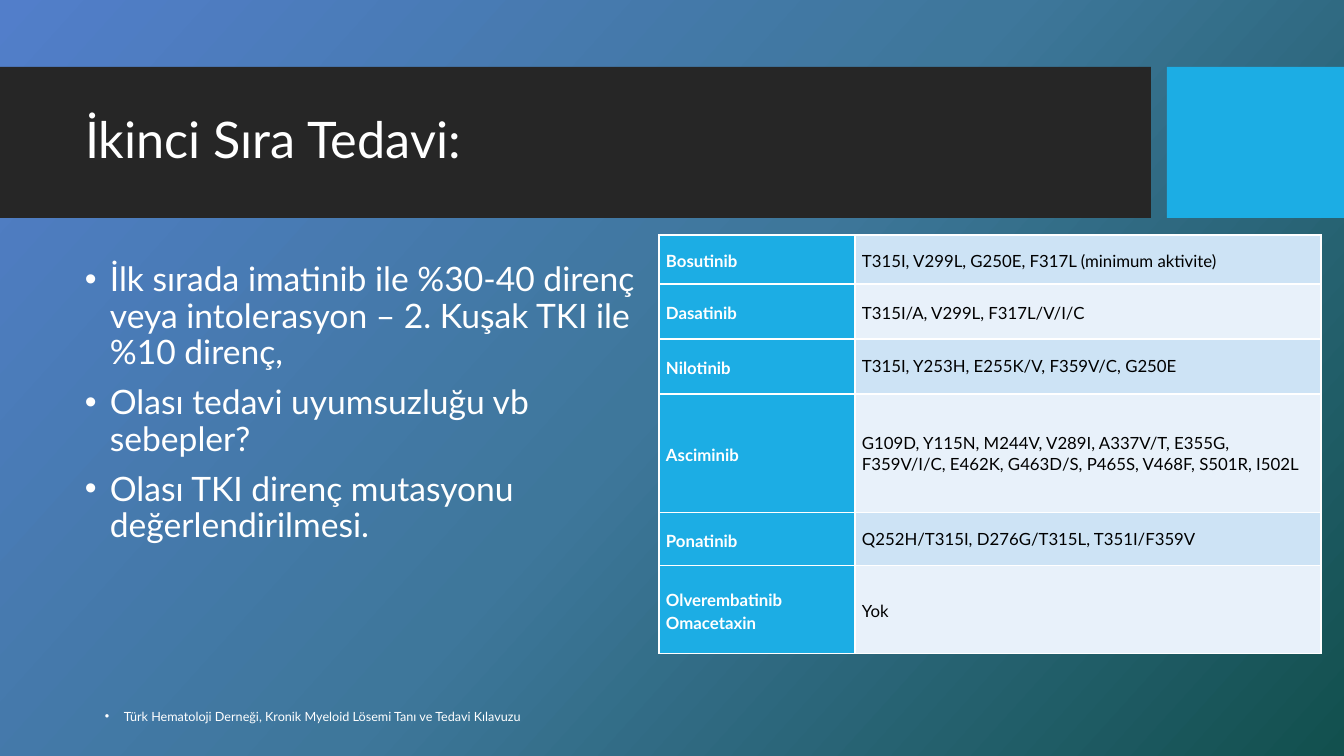
from lxml import etree
from pptx import Presentation
from pptx import util as u
from pptx.dml.color import RGBColor
from pptx.enum import shapes, text
from pptx.oxml.ns import qn

PX_PER_INCH = 100.8
WHITE = RGBColor(0xFF, 0xFF, 0xFF)
BLACK = RGBColor(0, 0, 0)
CHARCOAL = RGBColor(0x26, 0x26, 0x26)
CYAN = RGBColor(0x1C, 0xAD, 0xE4)
ROW_TINTS = [RGBColor(0xCD, 0xE3, 0xF5), RGBColor(0xE8, 0xF1, 0xFA)]
BACKGROUND = [
    (0, RGBColor(0x52, 0x7E, 0xCA)),
    (50, RGBColor(0x3E, 0x77, 0x9B)),
    (100, RGBColor(0x12, 0x50, 0x4E)),
]

REASONS = [
    "İlk sırada imatinib ile %30-40 direnç veya intolerasyon – 2. Kuşak TKI ile %10 direnç,",
    "Olası tedavi uyumsuzluğu vb sebepler?",
    "Olası TKI direnç mutasyonu değerlendirilmesi.",
]
# Drug, resistant mutations, line spacing of the mutations, row height
MUTATIONS = [
    ("Bosutinib", "T315I, V299L, G250E, F317L (minimum aktivite)", 1.15, 49),
    ("Dasatinib", "T315I/A, V299L, F317L/V/I/C", 1.15, 55),
    ("Nilotinib", "T315I, Y253H, E255K/V, F359V/C, G250E", 1.0, 55),
    ("Asciminib", "G109D, Y115N, M244V, V289I, A337V/T, E355G, F359V/I/C, "
     "E462K, G463D/S, P465S, V468F, S501R, I502L", 1.0, 119),
    ("Ponatinib", "Q252H/T315I, D276G/T315L, T351I/F359V", 1.0, 53),
    ("Olverembatinib\nOmacetaxin", "Yok", 1.15, 88),
]
SOURCE = "Türk Hematoloji Derneği, Kronik Myeloid Lösemi Tanı ve Tedavi Kılavuzu"


def px(length):
    return u.Inches(length / PX_PER_INCH)


class SlideBuilder:
    font = "Lato"

    def __init__(self, page):
        self.page = page

    def background(self, stops, clockwise_angle):
        fill = self.page.background.fill
        fill.gradient()
        fill.gradient_angle = 360 - clockwise_angle
        stop_list = next(self.page.background._cSld.iter(qn("a:gsLst")))
        for stop in list(stop_list):
            stop_list.remove(stop)
        for percent, color in stops:
            stop = etree.SubElement(stop_list, qn("a:gs"), pos=str(percent * 1000))
            etree.SubElement(stop, qn("a:srgbClr"), val=str(color))

    def band(self, left, top, width, height, color):
        band = self.page.shapes.add_shape(
            shapes.MSO_SHAPE.RECTANGLE, px(left), px(top), px(width), px(height))
        band.shadow.inherit = False
        band.fill.solid()
        band.fill.fore_color.rgb = color
        band.line.fill.background()

    def title(self, words, left, top, width, height):
        """Fill the title placeholder and bring it in front of the bands."""
        title = self.page.shapes.title
        title.left, title.top, title.width, title.height = map(
            px, (left, top, width, height))
        frame = title.text_frame
        frame.text = words
        frame.auto_size = text.MSO_AUTO_SIZE.NONE
        frame.vertical_anchor = text.MSO_ANCHOR.MIDDLE
        self.format_text(frame, 36, WHITE, spacing=0.9)
        self.page.shapes._spTree.append(title._element)

    def bullets(self, items, left, top, width, height, size, indent, spacing=None, gap=None):
        box = self.page.shapes.add_textbox(px(left), px(top), px(width), px(height))
        frame = box.text_frame
        frame.word_wrap = True
        frame.text = "\n".join(items)
        for number, para in enumerate(frame.paragraphs):
            props = para._p.get_or_add_pPr()
            props.set("marL", str(px(indent)))
            props.set("indent", str(-px(indent)))
            etree.SubElement(props, qn("a:buFont"), typeface="Arial")
            etree.SubElement(props, qn("a:buChar"), char="•")
            if number and gap:
                para.space_before = u.Pt(gap)
        self.format_text(frame, size, WHITE, spacing=spacing)

    def table(self, rows, left, top, widths):
        heights = [row[-1] for row in rows]
        frame = self.page.shapes.add_table(
            len(rows), len(widths), px(left), px(top), px(sum(widths)), px(sum(heights)))
        table = frame.table
        table.first_row = table.horz_banding = False
        for column, width in zip(table.columns, widths):
            column.width = px(width)
        for index, (drug, mutations, spacing, height) in enumerate(rows):
            table.rows[index].height = px(height)
            self.cell(table.cell(index, 0), drug, CYAN, WHITE, 1.15, bold=True)
            self.cell(table.cell(index, 1), mutations, ROW_TINTS[index % 2], BLACK, spacing)

    def cell(self, cell, words, fill, color, spacing, bold=False):
        cell.text = words
        cell.vertical_anchor = text.MSO_ANCHOR.MIDDLE
        cell.margin_left = cell.margin_right = px(7)
        cell.margin_top = cell.margin_bottom = 0
        props = cell._tc.get_or_add_tcPr()
        for side in "LRTB":
            border = etree.SubElement(props, qn(f"a:ln{side}"), w=str(u.Pt(1)))
            solid = etree.SubElement(border, qn("a:solidFill"))
            etree.SubElement(solid, qn("a:srgbClr"), val=str(WHITE))
        cell.fill.solid()
        cell.fill.fore_color.rgb = fill
        self.format_text(cell.text_frame, 12, color, spacing, bold)

    def format_text(self, frame, size, color, spacing=None, bold=False):
        for para in frame.paragraphs:
            para.alignment = text.PP_ALIGN.LEFT
            para.line_spacing = spacing
            for span in para.runs:
                span.font.name = self.font
                span.font.size = u.Pt(size)
                span.font.bold = bold
                span.font.color.rgb = color


def main():
    deck = Presentation()
    deck.slide_width, deck.slide_height = px(1344), px(756)
    title_only = deck.slide_layouts.get_by_name("Title Only")
    slide = SlideBuilder(deck.slides.add_slide(title_only))
    slide.background(BACKGROUND, 42)
    slide.band(0, 67, 1151, 151, CHARCOAL)
    slide.band(1167, 67, 177, 151, CYAN)
    slide.title("İkinci Sıra Tedavi:", 75, 83, 1059, 119)
    slide.bullets(REASONS, 75, 258, 574, 397, size=24, indent=25, spacing=0.9, gap=10)
    slide.table(MUTATIONS, 659, 235, [196, 466])
    slide.bullets([SOURCE], 95, 704, 1159, 25, size=9, indent=19)
    deck.save("out.pptx")


if __name__ == "__main__":
    main()
